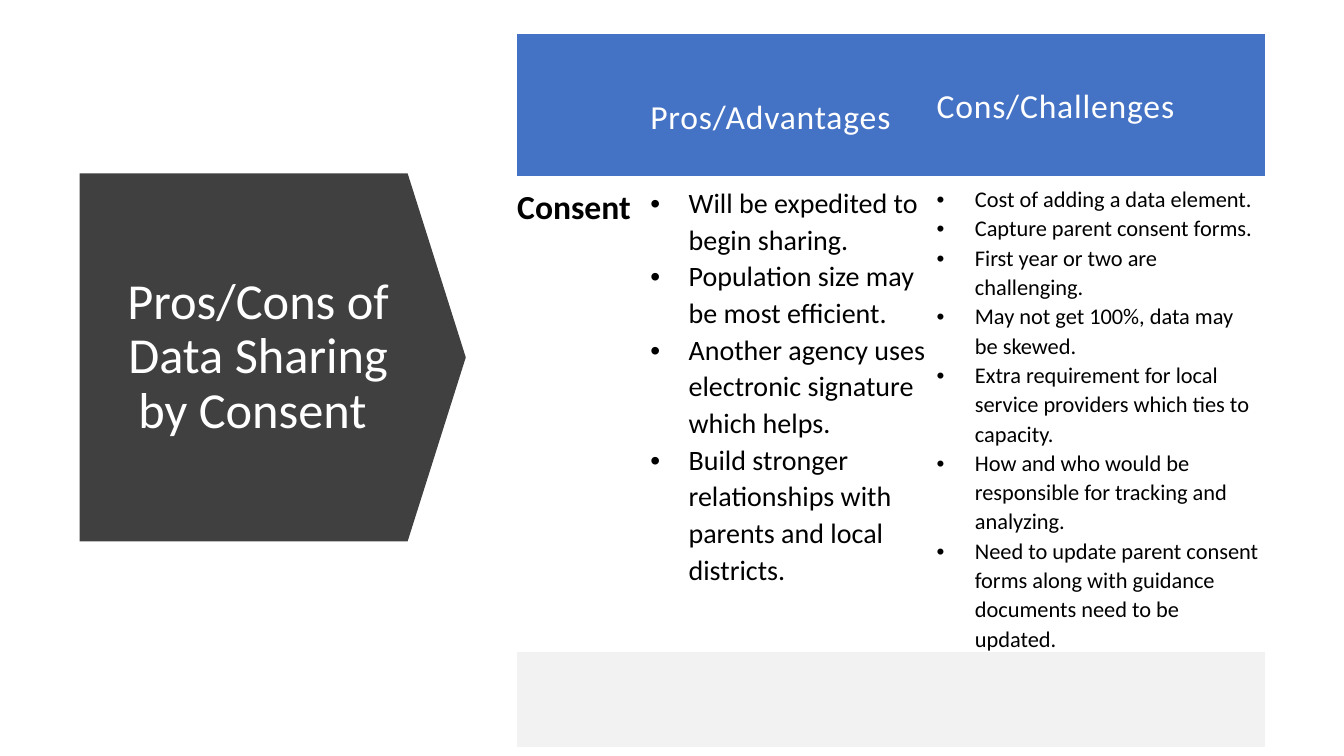
from pptx import Presentation
from pptx.dml.color import RGBColor
from pptx.enum.shapes import MSO_SHAPE
from pptx.enum.text import MSO_ANCHOR, PP_ALIGN
from pptx.oxml import parse_xml
from pptx.oxml.ns import nsdecls, qn
from pptx.util import Inches, Pt

THEME = {
    "font": "Calibri",
    "arrow": RGBColor(0x40, 0x40, 0x40),
    "header": RGBColor(0x44, 0x72, 0xC4),
    "footer": RGBColor(0xF2, 0xF2, 0xF2),
    "light": RGBColor(0xFF, 0xFF, 0xFF),
    "dark": RGBColor(0x00, 0x00, 0x00),
    "title_size": Pt(36),
    "heading_size": Pt(24),
    "pros_size": Pt(20),
    "cons_size": Pt(16),
}

PROS = [
    "Will be expedited to begin sharing.",
    "Population size may be most efficient.",
    "Another agency uses electronic signature which helps.",
    "Build stronger relationships with parents and local districts.",
]
CONS = [
    "Cost of adding a data element.",
    "Capture parent consent forms.",
    "First year or two are challenging.",
    "May not get 100%, data may be skewed.",
    "Extra requirement for local service providers which ties to capacity.",
    "How and who would be responsible for tracking and analyzing.",
    "Need to update parent consent forms along with guidance documents need to be updated.",
]


def style_font(font, size, color, bold=False):
    font.name = THEME["font"]
    font.size = size
    font.bold = bold
    font.color.rgb = color


def fill_cell(cell, lines, size, color, bold=False, bullets=False):
    cell.margin_left = 0
    cell.margin_right = Inches(0.06)
    cell.margin_top = cell.margin_bottom = Inches(0.08)
    cell.text_frame.text = "\n".join(lines)
    for para in cell.text_frame.paragraphs:
        para.line_spacing = 1.07
        if bullets:
            properties = para._p.get_or_add_pPr()
            properties.set("marL", str(Inches(0.38)))
            properties.set("indent", str(Inches(-0.38)))
            properties.append(parse_xml(f'<a:buFont {nsdecls("a")} typeface="Arial"/>'))
            properties.append(parse_xml(f'<a:buChar {nsdecls("a")} char="•"/>'))
        for span in para.runs:
            style_font(span.font, size, color, bold)


deck = Presentation()
deck.slide_width = Inches(13.33)
deck.slide_height = Inches(7.5)
page = deck.slides.add_slide(deck.slide_layouts[6])

arrow = page.shapes.add_shape(
    MSO_SHAPE.DOWN_ARROW, Inches(0.88), Inches(1.63), Inches(3.65), Inches(3.83)
)
arrow.rotation = 270
arrow.adjustments[0] = 1
arrow.adjustments[1] = 0.158
arrow.shadow.inherit = False
arrow.fill.solid()
arrow.fill.fore_color.rgb = THEME["arrow"]
arrow.line.fill.background()

title_box = page.shapes.add_textbox(Inches(1.12), Inches(2.15), Inches(2.88), Inches(2.79))
title_frame = title_box.text_frame
title_frame.word_wrap = True
title_frame.vertical_anchor = MSO_ANCHOR.MIDDLE
title_frame.text = "Pros/Cons of Data Sharing by Consent "
title_para = title_frame.paragraphs[0]
title_para.alignment = PP_ALIGN.CENTER
title_para.line_spacing = 0.9
style_font(title_para.runs[0].font, THEME["title_size"], THEME["light"])

table_frame = page.shapes.add_table(
    3, 3, Inches(5.13), Inches(0.34), Inches(7.42), Inches(6.29)
)
table = table_frame.table
table.first_row = False
table.horz_banding = False
for style_id in table_frame.element.iter(qn("a:tableStyleId")):
    style_id.text = "{2D5ABB26-0587-4C30-8999-92F81FD0307C}"
for column, width in zip(table.columns, (1.32, 2.84, 3.26)):
    column.width = Inches(width)
for row, height, color in zip(
    table.rows, (1.41, 3.94, 0.94), (THEME["header"], None, THEME["footer"])
):
    row.height = Inches(height)
    for cell in row.cells:
        if color is None:
            cell.fill.background()
        else:
            cell.fill.solid()
            cell.fill.fore_color.rgb = color

for column_index, heading in enumerate(("Pros/Advantages", "Cons/Challenges"), start=1):
    cell = table.cell(0, column_index)
    fill_cell(cell, [heading], THEME["heading_size"], THEME["light"])
    cell.vertical_anchor = MSO_ANCHOR.MIDDLE
    cell.text_frame.paragraphs[0].runs[0].font._element.set("spc", "60")
table.cell(0, 1).margin_top = Inches(0.31)

fill_cell(table.cell(1, 0), ["Consent"], THEME["heading_size"], THEME["dark"], bold=True)
fill_cell(table.cell(1, 1), PROS, THEME["pros_size"], THEME["dark"], bullets=True)
fill_cell(table.cell(1, 2), CONS, THEME["cons_size"], THEME["dark"], bullets=True)

deck.save("out.pptx")
